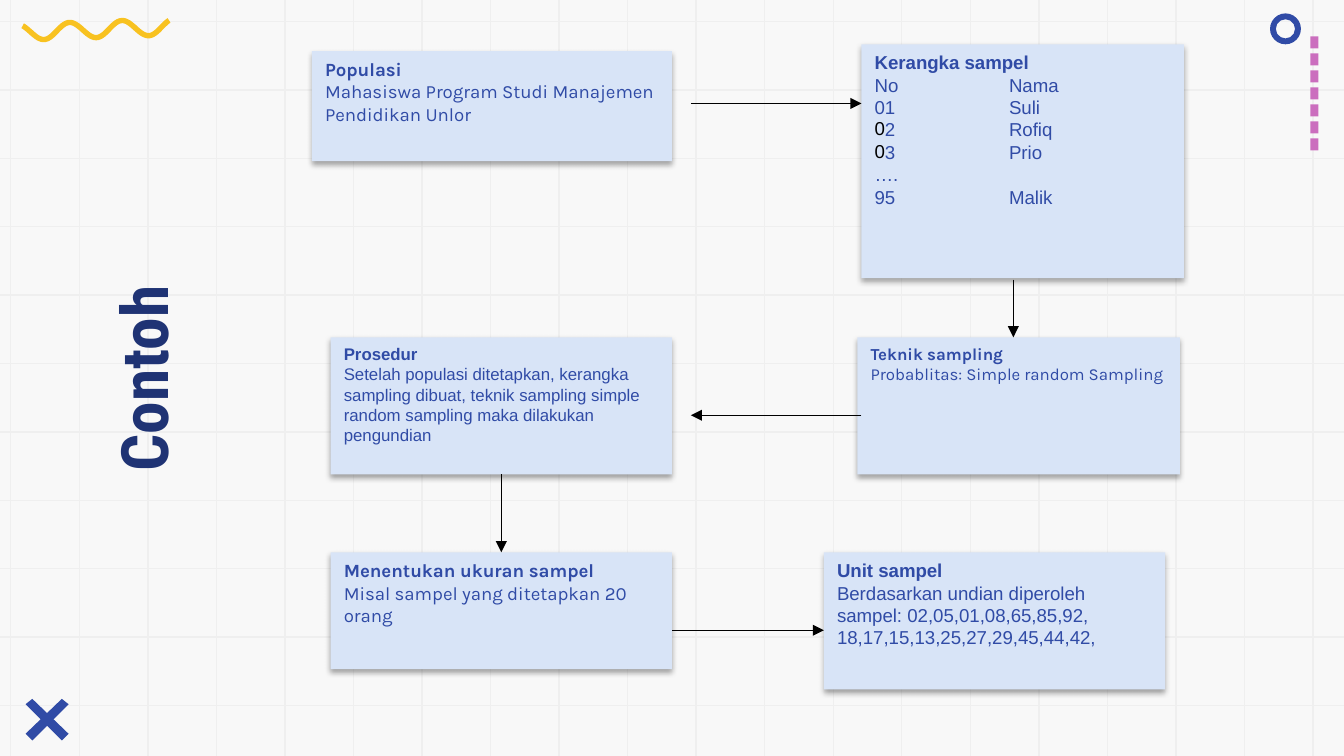
import math

from lxml import etree
from pptx import Presentation
from pptx.dml import color
from pptx.enum import shapes, text
from pptx.oxml import ns
from pptx.util import Inches, Pt

WIDTH = 10
HEIGHT = WIDTH * 9 / 16
PAPER, GRID, BOX = "F8F8F8", "EFEFEF", "D8E4F7"
BLUE, NAVY, PINK, YELLOW, BLACK = "304BA6", "1F3374", "CB6EBE", "F8C220", "000000"

# (left, top, width, height), font, size, heading, body lines
# A body line given as a tuple is (bullet, line).
BOXES = [
    ((2.32, 0.38, 2.68, 0.82), "Karla", 10, "Populasi",
     ["Mahasiswa Program Studi Manajemen Pendidikan Unlor"]),
    ((6.41, 0.33, 2.4, 1.74), "Arial", 10, "Kerangka sampel",
     ["No\tNama", "01\tSuli", ("0", "2\tRofiq"), ("0", "3\tPrio"), "….", "95\tMalik"]),
    ((6.38, 2.51, 2.4, 1.02), "Karla", 9, "Teknik sampling",
     ["Probablitas: Simple random Sampling"]),
    ((2.46, 2.51, 2.54, 1.02), "Arial", 9, "Prosedur",
     ["Setelah populasi ditetapkan, kerangka sampling dibuat, teknik sampling "
      "simple random sampling maka dilakukan pengundian"]),
    ((2.46, 4.11, 2.54, 0.87), "Karla", 10, "Menentukan ukuran sampel",
     ["Misal sampel yang ditetapkan 20 orang"]),
    ((6.13, 4.11, 2.54, 1.02), "Arial", 10, "Unit sampel",
     ["Berdasarkan undian diperoleh sampel: 02,05,01,08,65,85,92,",
      "18,17,15,13,25,27,29,45,44,42,"]),
]
ARROWS = [
    (5.14, 0.77, 6.41, 0.77),
    (7.54, 2.08, 7.54, 2.51),
    (6.41, 3.09, 5.14, 3.09),
    (3.73, 3.53, 3.73, 4.11),
    (5, 4.69, 6.13, 4.69),
]
CROSS_LEFT, CROSS_RIGHT = 0.19, 0.51
CROSS_BAR = [(0.24, 5.2), (0.19, 5.24), (0.46, 5.51), (0.51, 5.46)]


def rgb(value):
    return color.RGBColor.from_string(value)


def add_xml(parent, tag, **attributes):
    values = {name: str(value) for name, value in attributes.items()}
    return etree.SubElement(parent, ns.qn(tag), values)


def paint(shape, fill):
    shape.shadow.inherit = False
    shape.fill.solid()
    shape.fill.fore_color.rgb = rgb(fill)
    shape.line.fill.background()
    return shape


def add_preset(slide, kind, place, fill):
    return paint(slide.shapes.add_shape(kind, *map(Inches, place)), fill)


def add_outline(slide, points, fill):
    points = [(Inches(x), Inches(y)) for x, y in points]
    builder = slide.shapes.build_freeform(*points[0])
    builder.add_line_segments(points[1:], close=True)
    return paint(builder.convert_to_shape(), fill)


def add_line(slide, ends, line_color, arrow=False):
    line = slide.shapes.add_connector(shapes.MSO_CONNECTOR.STRAIGHT, *map(Inches, ends))
    line.line.color.rgb = rgb(line_color)
    line.line.width = Pt(0.75)
    if arrow:
        add_xml(line._element.spPr.find(ns.qn("a:ln")), "a:tailEnd", type="triangle")
    add_xml(line._element.spPr, "a:effectLst")


def add_drop_shadow(shape):
    effects = shape._element.spPr.find(ns.qn("a:effectLst"))
    shadow = add_xml(effects, "a:outerShdw", blurRad=Pt(3.1), dist=Pt(1.8),
                     dir=90 * 60000, algn="t", rotWithShape=0)
    add_xml(add_xml(shadow, "a:srgbClr", val=BLACK), "a:alpha", val=35000)


def add_bullet(paragraph, bullet, font):
    properties = paragraph._p.get_or_add_pPr()
    properties.set("marL", "0")
    properties.set("indent", str(Inches(-0.07)))
    add_xml(add_xml(properties, "a:buClr"), "a:srgbClr", val=BLACK)
    add_xml(properties, "a:buFont", typeface=font)
    add_xml(properties, "a:buChar", char=bullet)


def add_tab_stop(paragraph, position):
    tabs = add_xml(paragraph._p.get_or_add_pPr(), "a:tabLst")
    add_xml(tabs, "a:tab", pos=Inches(position), algn="l")


def set_font(run, font_color, **values):
    for name, value in values.items():
        setattr(run.font, name, value)
    run.font.color.rgb = rgb(font_color)


def add_box(slide, place, font, size, heading, body):
    box = add_preset(slide, shapes.MSO_SHAPE.RECTANGLE, place, BOX)
    add_drop_shadow(box)
    frame = box.text_frame
    frame.word_wrap = True
    frame.vertical_anchor = text.MSO_ANCHOR.TOP
    for row, line in enumerate([heading] + body):
        paragraph = frame.add_paragraph() if row else frame.paragraphs[0]
        paragraph.alignment = text.PP_ALIGN.LEFT
        if isinstance(line, tuple):
            bullet, line = line
            add_bullet(paragraph, bullet, font)
        if "\t" in line:
            add_tab_stop(paragraph, 1)
        run = paragraph.add_run()
        run.text = line
        set_font(run, BLUE, name=font, size=Pt(size), bold=row == 0)


def add_title(slide):
    title = slide.shapes.add_textbox(*map(Inches, (-1.24, 2.41, 4.62, 0.81)))
    title.rotation = 270
    frame = title.text_frame
    frame.word_wrap = True
    frame.vertical_anchor = text.MSO_ANCHOR.TOP
    frame.margin_top = frame.margin_bottom = Inches(0.1)
    paragraph = frame.paragraphs[0]
    paragraph.alignment = text.PP_ALIGN.CENTER
    run = paragraph.add_run()
    run.text = "Contoh"
    set_font(run, NAVY, name="Roboto Condensed", size=Pt(35), bold=True)


def wave_edge(side, steps=80):
    """Points along one edge of the wavy ribbon; side is -1 or 1."""
    left, right, middle, height, period, half = 0.17, 1.26, 0.22, 0.06, 0.39, 0.02
    points = []
    for step in range(steps + 1):
        x = left + (right - left) * step / steps
        angle = math.tau * (x - (left + right) / 2) / period
        slope = -height * math.tau / period * math.sin(angle)
        offset = side * half / math.hypot(1, slope)
        points.append((x - slope * offset, middle + height * math.cos(angle) + offset))
    return points


def add_decoration(slide):
    for row in range(11):
        y = 0.16 + 5.09 * row / 10
        add_line(slide, (WIDTH, y, 0, y), GRID)
    for column in range(20):
        x = 0.08 + 0.51 * column
        add_line(slide, (x, 0, x, HEIGHT), GRID)
    for dash in range(7):
        place = (9.75, 0.27 + 0.76 * dash / 6, 0.06, 0.09)
        add_preset(slide, shapes.MSO_SHAPE.RECTANGLE, place, PINK)
    mirrored = [(CROSS_LEFT + CROSS_RIGHT - x, y) for x, y in CROSS_BAR]
    for bar in (CROSS_BAR, mirrored):
        add_outline(slide, bar, BLUE)
    wave = add_outline(slide, wave_edge(-1) + wave_edge(1)[::-1], YELLOW)
    wave.rotation = 357.9
    ring = add_preset(slide, shapes.MSO_SHAPE.DONUT, (9.45, 0.1, 0.23, 0.23), BLUE)
    ring.adjustments[0] = 0.19


def main():
    presentation = Presentation()
    presentation.slide_width, presentation.slide_height = Inches(WIDTH), Inches(HEIGHT)
    slide = presentation.slides.add_slide(presentation.slide_layouts[6])
    slide.background.fill.solid()
    slide.background.fill.fore_color.rgb = rgb(PAPER)
    add_decoration(slide)
    add_title(slide)
    for box in BOXES:
        add_box(slide, *box)
    for ends in ARROWS:
        add_line(slide, ends, BLACK, arrow=True)
    presentation.save("out.pptx")


if __name__ == "__main__":
    main()
